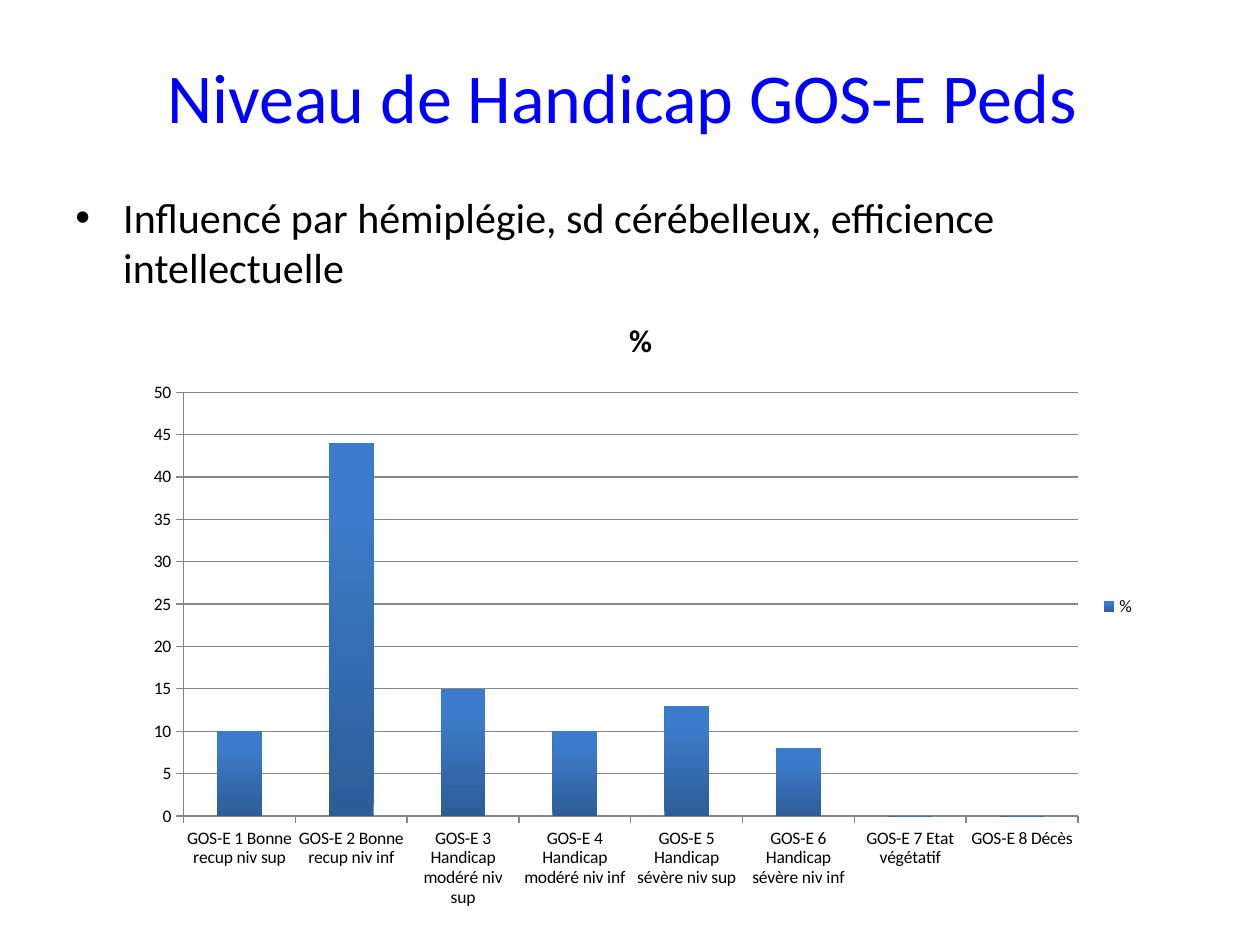
from lxml import etree
from pptx import Presentation
from pptx.chart.data import CategoryChartData as ChartData
from pptx.dml.color import RGBColor
from pptx.enum.chart import XL_CHART_TYPE as ChartType
from pptx.enum.chart import XL_LEGEND_POSITION as LegendPosition
from pptx.enum.chart import XL_TICK_MARK as TickMark
from pptx.enum.text import MSO_ANCHOR as Anchor
from pptx.enum.text import PP_ALIGN as Align
from pptx.oxml.ns import qn
from pptx.util import Inches, Pt


def color(hex_code):
    return RGBColor.from_string(hex_code)


class SlideBuilder:
    font_name = "Calibri"
    title_color = "0000FF"
    text_color = "000000"
    axis_color = "868686"
    bar_stops = (("2C5D98", 0), ("3C7BC9", 0.8))

    def __init__(self, page):
        self.page = page

    def style_font(self, font, size, hex_code, bold=False):
        font.name, font.size, font.bold = self.font_name, Pt(size), bold
        font.color.rgb = color(hex_code)

    def text(self, text, left, top, width, height, size, hex_code):
        box = self.page.shapes.add_textbox(
            Inches(left), Inches(top), Inches(width), Inches(height))
        box.text_frame.word_wrap = True
        para = box.text_frame.paragraphs[0]
        para.text = text
        self.style_font(para.font, size, hex_code)
        return box

    def title(self, text, *place):
        box = self.text(text, *place, 40, self.title_color)
        box.text_frame.vertical_anchor = Anchor.MIDDLE
        box.text_frame.paragraphs[0].alignment = Align.CENTER

    def bullet(self, text, *place):
        box = self.text(text, *place, 24, self.text_color)
        para = box.text_frame.paragraphs[0]
        para.space_before = Pt(4.8)
        properties = para._p.get_or_add_pPr()
        indent = Inches(0.38)
        properties.set("marL", str(indent))
        properties.set("indent", str(-indent))
        etree.SubElement(properties, qn("a:buFont")).set("typeface", "Arial")
        etree.SubElement(properties, qn("a:buChar")).set("char", "•")
        # The schema wants the bullet ahead of the default run properties
        defaults = properties.find(qn("a:defRPr"))
        if defaults is not None:
            properties.append(defaults)

    def column_chart(self, name, levels, left, top, width, height):
        data = ChartData()
        data.categories = list(levels)
        data.add_series(name, list(levels.values()))
        chart = self.page.shapes.add_chart(
            ChartType.COLUMN_CLUSTERED, Inches(left), Inches(top),
            Inches(width), Inches(height), data).chart
        self.style_font(chart.font, 10, self.text_color)

        # Title and legend
        chart.has_title = True
        heading = chart.chart_title.text_frame
        heading.text = name
        self.style_font(heading.paragraphs[0].font, 18, self.text_color, bold=True)
        chart.has_legend = True
        chart.legend.position = LegendPosition.RIGHT
        chart.legend.include_in_layout = False

        # Axes and gridlines
        values = chart.value_axis
        values.minimum_scale, values.maximum_scale, values.major_unit = 0, 50, 5
        values.has_major_gridlines = True
        for axis in (chart.category_axis, values):
            axis.major_tick_mark = TickMark.OUTSIDE
        for part in (chart.category_axis, values, values.major_gridlines):
            part.format.line.color.rgb = color(self.axis_color)
            part.format.line.width = Pt(0.75)

        # Bars, dark at the foot
        plot = chart.plots[0]
        plot.gap_width = 150
        plot.vary_by_categories = False
        series = plot.series[0]
        series.invert_if_negative = False
        fill = series.format.fill
        fill.gradient()
        fill.gradient_angle = 90
        for stop, (hex_code, position) in zip(fill.gradient_stops, self.bar_stops):
            stop.color.rgb = color(hex_code)
            stop.position = position


def main():
    deck = Presentation()
    deck.slide_width, deck.slide_height = Inches(10), Inches(7.5)
    builder = SlideBuilder(deck.slides.add_slide(deck.slide_layouts[6]))

    # Heading and remark
    builder.title("Niveau de Handicap GOS-E Peds ", 0.5, 0.13, 9, 1.25)
    builder.bullet("Influencé par hémiplégie, sd cérébelleux, efficience intellectuelle",
                   0.5, 1.47, 9, 4.95)

    # Share of patients at each level
    levels = {
        "GOS-E 1 Bonne recup niv sup": 10,
        "GOS-E 2 Bonne recup niv inf": 44,
        "GOS-E 3 Handicap modéré niv sup": 15,
        "GOS-E 4 Handicap modéré niv inf": 10,
        "GOS-E 5 Handicap sévère niv sup": 13,
        "GOS-E 6 Handicap sévère niv inf": 8,
        "GOS-E 7 Etat végétatif": 0,
        "GOS-E 8 Décès": 0,
    }
    builder.column_chart("%", levels, 1.06, 2.33, 8.05, 4.97)

    deck.save("out.pptx")


if __name__ == "__main__":
    main()
